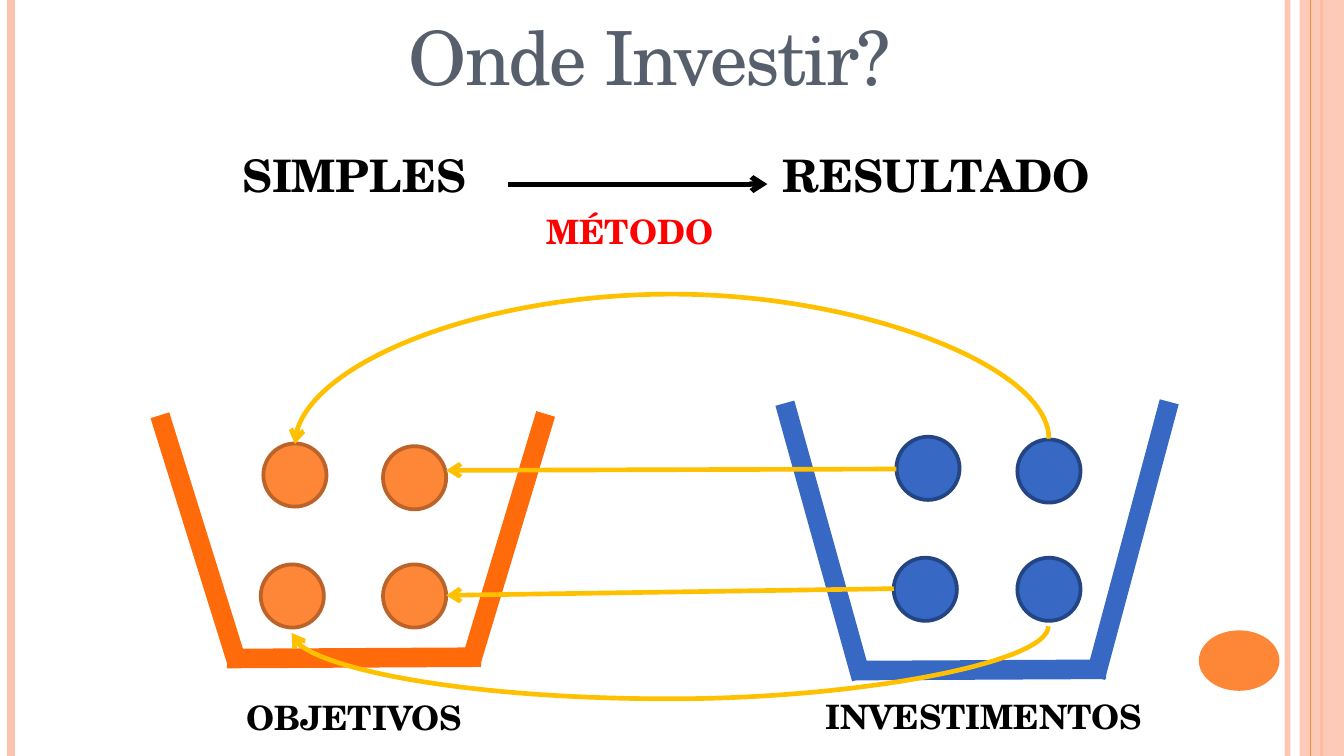
from pptx import Presentation
from pptx import util as u
from pptx.dml.color import RGBColor
from pptx.enum import shapes, text
from pptx.oxml.ns import qn
from lxml import etree

COLORS = {
    "peach": "FEC3AE", "orange": "FE8637", "orange_edge": "BC6329",
    "orange_bucket": "FF6B0A", "blue": "3668C4", "blue_edge": "244583",
    "yellow": "FFC000", "black": "000000", "red": "FF0000", "slate": "575F6D",
}
FONT = "TeX Gyre Schola"
STRAIGHT = shapes.MSO_CONNECTOR.STRAIGHT
CURVE = shapes.MSO_CONNECTOR.CURVE
WIDTH = 10
HEIGHT = WIDTH * 9 / 16

deck = Presentation()
deck.slide_width, deck.slide_height = u.Inches(WIDTH), u.Inches(HEIGHT)
page = deck.slides.add_slide(deck.slide_layouts[6])


def add_line(start, end, color, width, parent=page, kind=STRAIGHT,
             arrow=False, alpha=None):
    line = parent.shapes.add_connector(
        kind, *(u.Inches(value) for value in (*start, *end)))
    line.line.color.rgb = RGBColor.from_string(COLORS[color])
    line.line.width = u.Pt(width)
    properties = line._element.spPr
    outline = properties.find(qn("a:ln"))
    if alpha:
        tint = outline.find(".//" + qn("a:srgbClr"))
        etree.SubElement(tint, qn("a:alpha"), val=str(alpha * 1000))
    if arrow:
        etree.SubElement(outline, qn("a:tailEnd"), type="arrow")
    etree.SubElement(properties, qn("a:effectLst"))
    return line


def add_text(words, left, top, width, height, size=18, color="black",
             bold=True, spacing=None, grow=True):
    box = page.shapes.add_textbox(
        *(u.Inches(value) for value in (left, top, width, height)))
    frame = box.text_frame
    frame.word_wrap = True
    if grow:
        frame.auto_size = text.MSO_AUTO_SIZE.SHAPE_TO_FIT_TEXT
    para = frame.paragraphs[0]
    para.alignment = text.PP_ALIGN.CENTER
    span = para.add_run()
    span.text = words
    span.font.name = FONT
    span.font.size = u.Pt(size)
    span.font.bold = bold
    span.font.color.rgb = RGBColor.from_string(COLORS[color])
    if spacing:
        span._r.get_or_add_rPr().set("spc", str(spacing * 100))


# Side stripes, the band between them and the corner disc
for x, color, width, alpha in [(9.58, "peach", 3, 93), (0.08, "peach", 4.5, None),
                               (9.83, "orange", 1.5, None)]:
    add_line((x, 0), (x, HEIGHT), color, width, alpha=alpha)

OVAL, RECTANGLE = shapes.MSO_SHAPE.OVAL, shapes.MSO_SHAPE.RECTANGLE
solids = [(RECTANGLE, 9.67, 0, 0.33, HEIGHT, "peach", None),
          (OVAL, 8.92, 4.69, 0.6, 0.45, "orange", None)]
balls = {
    "orange": [(1.94, 4.2), (2.85, 4.2), (1.96, 3.3), (2.85, 3.32)],
    "blue": [(6.65, 4.15), (7.57, 4.15), (6.67, 3.25), (7.57, 3.27)],
}
for color, places in balls.items():
    solids += [(OVAL, x, y, 0.47, 0.47, color, color + "_edge") for x, y in places]

for kind, left, top, width, height, color, edge in solids:
    solid = page.shapes.add_shape(
        kind, *(u.Inches(value) for value in (left, top, width, height)))
    solid.shadow.inherit = False
    solid.fill.solid()
    solid.fill.fore_color.rgb = RGBColor.from_string(COLORS[color])
    if edge:
        solid.line.color.rgb = RGBColor.from_string(COLORS[edge])
        solid.line.width = u.Pt(2)
    else:
        solid.line.fill.background()
    if kind == RECTANGLE:
        tint = solid._element.spPr.find(".//" + qn("a:srgbClr"))
        etree.SubElement(tint, qn("a:alpha"), val="87000")
        add_line((9.75, 0), (9.75, HEIGHT), "orange", 0.75)

# Buckets: left side, right side, bottom
buckets = {
    "orange_bucket": [((1.19, 3.09), (1.77, 4.95)), ((4.06, 3.08), (3.5, 4.94)),
                      ((1.69, 4.9), (3.58, 4.89))],
    "blue": [((5.84, 3), (6.41, 5.05)), ((8.7, 2.99), (8.15, 5.04)),
             ((6.34, 4.99), (8.23, 4.98))],
}
for color, sides in buckets.items():
    bucket = page.shapes.add_group_shape()
    for start, end in sides:
        add_line(start, end, color, 10.5, parent=bucket)

# Curved arrows: ends before rotation, rotation in degrees, bulge in widths
for start, end, degrees, bulge in [((5.02, 6.09), (4.98, 0.48), 270, -26.8),
                                   ((4.96, 1.87), (5.01, 7.5), 90, 10.8)]:
    curve = add_line(start, end, "yellow", 2.5, kind=CURVE, arrow=True)
    properties = curve._element.spPr
    properties.find(qn("a:xfrm")).set("rot", str(degrees * 60000))
    geometry = properties.find(qn("a:prstGeom"))
    guides = geometry.find(qn("a:avLst"))
    if guides is None:
        guides = etree.SubElement(geometry, qn("a:avLst"))
    etree.SubElement(guides, qn("a:gd"), name="adj1",
                     fmla=f"val {round(bulge * 100000)}")

for start, end, color, width in [((6.67, 3.49), (3.32, 3.5), "yellow", 2.5),
                                 ((6.65, 4.38), (3.32, 4.43), "yellow", 2.5),
                                 ((3.78, 1.37), (5.71, 1.37), "black", 2.75)]:
    add_line(start, end, color, width, arrow=True)

add_text("OBJETIVOS", 1.69, 5.14, 1.89, 0.4)
add_text("INVESTIMENTOS", 5.94, 5.13, 2.76, 0.4)
add_text("SIMPLES", 1.14, 1.05, 2.99, 0.5, size=24)
add_text("RESULTADO", 5.47, 1.05, 2.99, 0.5, size=24)
add_text("MÉTODO", 3.9, 1.52, 1.57, 0.4, color="red")
add_text("Onde Investir?", 0.67, 0.03, 8.33, 0.94, size=40, color="slate",
         bold=False, spacing=-1, grow=False)

deck.save("out.pptx")
